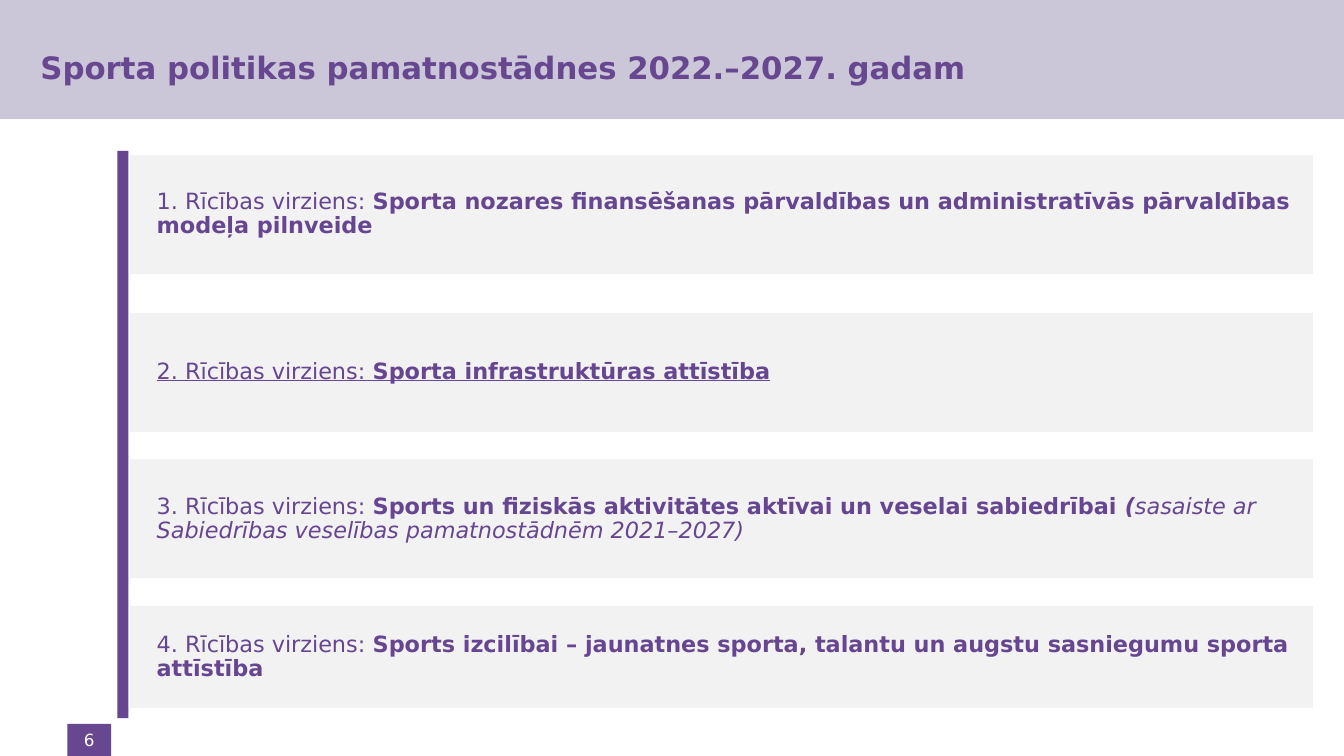
from pptx import Presentation
from pptx import util as u
from pptx.dml.color import RGBColor
from pptx.enum import shapes, text

PURPLE = RGBColor(0x66, 0x47, 0x90)
DEEP_PURPLE = RGBColor(0x66, 0x46, 0x90)
LILAC = RGBColor(0xCB, 0xC7, 0xD8)
GREY = RGBColor(0xF2, 0xF2, 0xF2)
WHITE = RGBColor(0xFF, 0xFF, 0xFF)


def add_run(paragraph, words, size=16, color=DEEP_PURPLE, bold=False, italic=False, underline=False):
    run = paragraph.add_run()
    run.text = words
    font = run.font
    font.name, font.size = "DejaVu Sans", u.Pt(size)
    font.color.rgb = color
    font.bold, font.italic, font.underline = bold, italic, underline


def add_box(left, top, width, height, fill, margins=(0.1, 0.1, 0.1, 0.1)):
    box = slide.shapes.add_shape(
        shapes.MSO_SHAPE.RECTANGLE, u.Cm(left), u.Cm(top), u.Cm(width), u.Cm(height))
    box.shadow.inherit = False
    box.fill.solid()
    box.fill.fore_color.rgb = fill
    box.line.fill.background()
    frame = box.text_frame
    frame.word_wrap = True
    frame.vertical_anchor = text.MSO_ANCHOR.MIDDLE
    frame.margin_left, frame.margin_top, frame.margin_right, frame.margin_bottom = map(u.Cm, margins)
    return box


presentation = Presentation()
presentation.slide_width, presentation.slide_height = u.Cm(33.87), u.Cm(19.05)
slide = presentation.slides.add_slide(presentation.slide_layouts[5])

# Header band with the title in front of it
add_box(0, 0, 33.87, 3, LILAC)
title = slide.shapes.title
slide.shapes._spTree.append(title._element)
title.left, title.top, title.width, title.height = u.Cm(1.02), u.Cm(0.1), u.Cm(30.86), u.Cm(3.18)
frame = title.text_frame
frame.auto_size = text.MSO_AUTO_SIZE.NONE
frame.vertical_anchor = text.MSO_ANCHOR.MIDDLE
frame.margin_left = 0
frame.paragraphs[0].alignment = text.PP_ALIGN.LEFT
add_run(frame.paragraphs[0], "Sporta politikas pamatnostādnes 2022.–2027. gadam",
        size=22, color=PURPLE, bold=True)

# Page number badge
badge = add_box(1.7, 18.24, 1.1, 0.81, PURPLE)
paragraph = badge.text_frame.paragraphs[0]
paragraph.alignment = text.PP_ALIGN.CENTER
add_run(paragraph, "6", size=12, color=WHITE)

# Directions of action: top, height, underlined, runs after the numbered label
BOLD = {"bold": True}
directions = [
    (3.86, 3.07, False, [
        ("Sporta nozares finansēšanas pārvaldības un administratīvās pārvaldības modeļa pilnveide", BOLD)]),
    (7.85, 3.07, True, [("Sporta infrastruktūras attīstība", BOLD)]),
    (11.54, 3.07, False, [
        ("Sports un fiziskās aktivitātes aktīvai un veselai sabiedrībai ", BOLD),
        ("(", {"bold": True, "italic": True}),
        ("sasaiste ar Sabiedrības veselības pamatnostādnēm 2021–2027)", {"italic": True})]),
    (15.24, 2.64, False, [
        ("Sports izcilībai – jaunatnes sporta, talantu un augstu sasniegumu sporta attīstība", BOLD)]),
]
for number, (top, height, underline, runs) in enumerate(directions, 1):
    panel = add_box(3.23, top, 29.9, height, GREY, margins=(0.72, 0.13, 0.23, 0.13))
    panel.line.color.rgb = WHITE
    panel.line.width = u.Pt(2)
    paragraph = panel.text_frame.paragraphs[0]
    paragraph.alignment = text.PP_ALIGN.LEFT
    paragraph.line_spacing = 0.9
    for words, style in [(f"{number}. Rīcības virziens: ", {})] + runs:
        add_run(paragraph, words, underline=underline, **style)

# Vertical bar joining the panels
add_box(2.96, 3.8, 0.28, 14.3, DEEP_PURPLE)

presentation.save("out.pptx")
